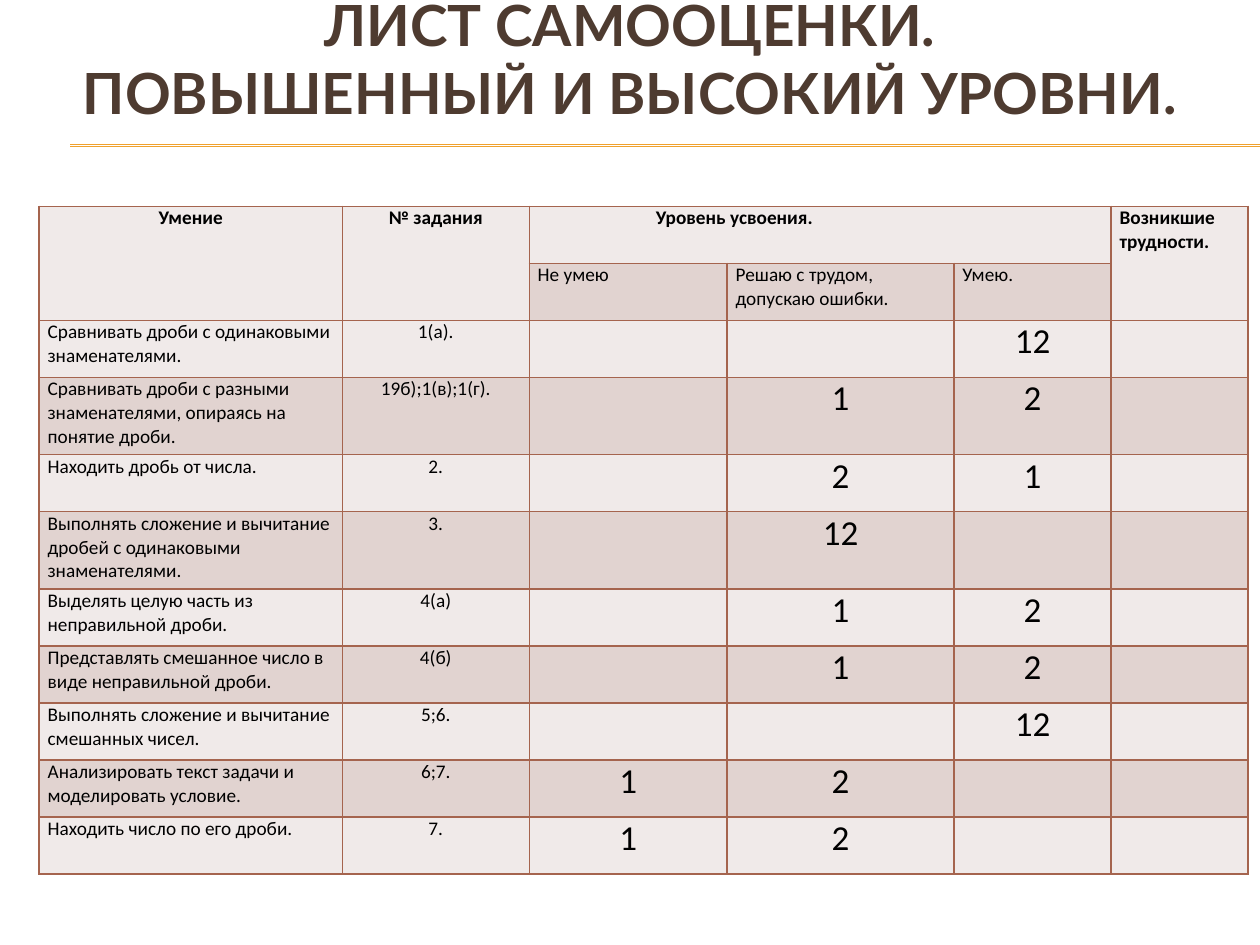
from typing import Any, NamedTuple

from lxml.etree import SubElement
from pptx import Presentation
from pptx.dml.color import RGBColor
from pptx.enum.shapes import MSO_CONNECTOR
from pptx.enum.text import MSO_ANCHOR, PP_ALIGN
from pptx.oxml import parse_xml
from pptx.oxml.ns import nsdecls, qn
from pptx.util import Cm, Pt

GOLD, BROWN, RUST, BLACK = "F0A22E", "4E3B30", "A5644E", "000000"
BANDS = ("F0EAE9", "E1D3D0")
LEFT, MID = PP_ALIGN.LEFT, PP_ALIGN.CENTER
WIDTHS = (6.11, 3.77, 3.99, 4.57, 3.17, 2.76)
LOW, TALL = 1.15, 1.56
TALL_ROWS = (3, 5)


class Head(NamedTuple):
    row: int
    col: int
    text: str
    rows: int = 1
    cols: int = 1
    bold: bool = True
    align: Any = LEFT
    indent: float = 0


class Skill(NamedTuple):
    name: str
    task: str
    fail: str = ""
    hard: str = ""
    good: str = ""


HEADS = (
    Head(0, 0, "Умение", rows=2, align=MID),
    Head(0, 1, "№ задания", rows=2, align=MID),
    Head(0, 2, "Уровень усвоения.", cols=3, indent=2.38),
    Head(0, 5, "Возникшие трудности.", rows=2),
    Head(1, 2, "Не умею", bold=False),
    Head(1, 3, "Решаю с трудом, допускаю ошибки.", bold=False),
    Head(1, 4, "Умею.", bold=False),
)
SKILLS = (
    Skill("Сравнивать дроби с одинаковыми знаменателями.", "1(а).", good="12"),
    Skill("Сравнивать дроби с разными знаменателями, опираясь на понятие дроби.",
          "19б);1(в);1(г).", hard="1", good="2"),
    Skill("Находить дробь от числа.", "2.", hard="2", good="1"),
    Skill("Выполнять сложение и вычитание дробей с одинаковыми знаменателями.",
          "3.", hard="12"),
    Skill("Выделять целую часть из неправильной дроби.", "4(а)", hard="1", good="2"),
    Skill("Представлять смешанное число в виде неправильной дроби.",
          "4(б)", hard="1", good="2"),
    Skill("Выполнять сложение и вычитание смешанных чисел.", "5;6.", good="12"),
    Skill("Анализировать текст задачи и моделировать условие.",
          "6;7.", fail="1", hard="2"),
    Skill("Находить число по его дроби.", "7.", fail="1", hard="2"),
)


def tint(code: str) -> RGBColor:
    return RGBColor.from_string(code)


def put(item: Any, form: dict[str, Any]) -> None:
    for key, value in form.items():
        setattr(item, key, value)


def write(frame: Any, text: str, size: float, bold: bool = False,
          align: Any = LEFT, face: str = "Calibri", code: str = BLACK) -> Any:
    para = frame.paragraphs[0]
    para.text = text
    para.alignment = align
    put(para.font, {"name": face, "size": Pt(size), "bold": bold})
    para.font.color.rgb = tint(code)
    for run in para.runs:
        put(run.font, {"name": face, "size": Pt(size), "bold": bold})
        run.font.color.rgb = tint(code)
    return para


def rule(slide: Any, top: float) -> None:
    line = slide.shapes.add_connector(
        MSO_CONNECTOR.STRAIGHT, Cm(1.42), Cm(top), Cm(25.4), Cm(top))
    line.line.color.rgb = tint(GOLD)
    line.line.width = Pt(0.75)
    SubElement(line._element.spPr, qn("a:effectLst"))


def dress(cell: Any, code: str) -> None:
    put(cell, {"margin_left": Cm(0.17), "margin_right": Cm(0.17),
               "margin_top": 0, "margin_bottom": 0})
    cell.fill.solid()
    cell.fill.fore_color.rgb = tint(code)
    props = cell._tc.get_or_add_tcPr()
    for spot, side in enumerate("LRTB"):
        props.insert(spot, parse_xml(
            f'<a:ln{side} {nsdecls("a")} w="{Pt(1)}"><a:solidFill>'
            f'<a:srgbClr val="{RUST}"/></a:solidFill></a:ln{side}>'))


def grid(slide: Any) -> None:
    count = len(SKILLS) + 2
    highs = [TALL if row in TALL_ROWS else LOW for row in range(count)]
    table = slide.shapes.add_table(
        count, len(WIDTHS), Cm(0.79), Cm(4.16),
        Cm(sum(WIDTHS)), Cm(sum(highs))).table
    put(table, {"first_row": False, "horz_banding": False})
    for col, width in zip(table.columns, WIDTHS):
        col.width = Cm(width)
    for row, high in zip(table.rows, highs):
        row.height = Cm(high)
    for row in range(count):
        for col in range(len(WIDTHS)):
            dress(table.cell(row, col), BANDS[row % 2])

    # Header cells
    for head in HEADS:
        cell = table.cell(head.row, head.col)
        if head.rows * head.cols > 1:
            cell.merge(table.cell(head.row + head.rows - 1,
                                  head.col + head.cols - 1))
        para = write(cell.text_frame, head.text, 11, head.bold, head.align)
        if head.indent:
            para._p.get_or_add_pPr().set("marL", str(Cm(head.indent)))

    # Skills and their marks
    for row, skill in enumerate(SKILLS, 2):
        for col, text in enumerate(skill):
            if text:
                write(table.cell(row, col).text_frame, text,
                      11 if col < 2 else 20, align=MID if col else LEFT)


def main() -> None:
    deck = Presentation()
    put(deck, {"slide_width": Cm(25.4), "slide_height": Cm(19.05)})
    slide = deck.slides.add_slide(deck.slide_layouts[6])

    # Double rule under the title
    for top in (2.92, 2.95):
        rule(slide, top)

    # Title
    frame = slide.shapes.add_textbox(0, 0, Cm(25.4), Cm(2.34)).text_frame
    put(frame, {"word_wrap": True, "vertical_anchor": MSO_ANCHOR.MIDDLE,
                "margin_top": 0, "margin_bottom": 0})
    write(frame, "ЛИСТ САМООЦЕНКИ.\vПОВЫШЕННЫЙ И ВЫСОКИЙ УРОВНИ.",
          32.4, True, MID, "Lato", BROWN)

    # Table
    grid(slide)
    deck.save("out.pptx")


if __name__ == "__main__":
    main()
